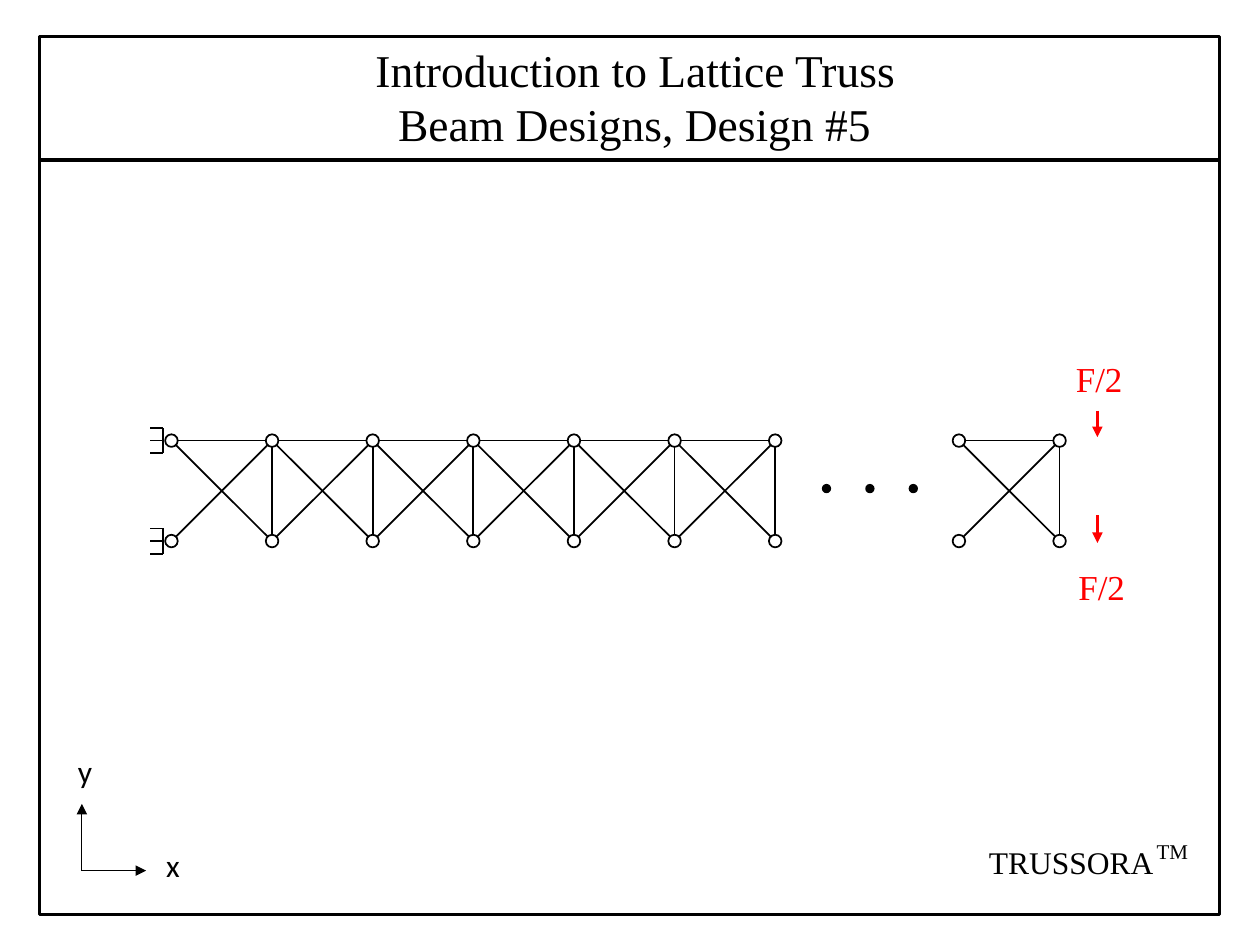
from lxml import etree
from pptx import Presentation
from pptx.dml.color import RGBColor
from pptx.enum import shapes, text
from pptx.oxml.ns import qn
from pptx.util import Pt

COLORS = {"ink": "000000", "paper": "FFFFFF", "force": "FF0000"}
SERIF, SANS = "Times New Roman", "Calibri"


class Sketch:
    frame_format = {
        "word_wrap": True,
        "auto_size": text.MSO_AUTO_SIZE.NONE,
        "vertical_anchor": text.MSO_ANCHOR.TOP,
        "margin_left": Pt(7.2),
        "margin_right": Pt(7.2),
        "margin_top": Pt(3.6),
        "margin_bottom": Pt(3.6),
    }

    def __init__(self, page):
        self.page = page
        self.layer = page.shapes

    def start_group(self):
        self.layer = self.page.shapes.add_group_shape().shapes

    def end_group(self):
        self.layer = self.page.shapes

    def color(self, name):
        return RGBColor.from_string(COLORS[name])

    def line(self, start, end, width=1, color="ink", arrow=False):
        connector = self.layer.add_connector(
            shapes.MSO_CONNECTOR.STRAIGHT, *map(Pt, (*start, *end)))
        connector.line.width = Pt(width)
        connector.line.color.rgb = self.color(color)
        properties = connector._element.spPr
        if arrow:
            etree.SubElement(properties.find(qn("a:ln")), qn("a:tailEnd"), type="triangle")
        etree.SubElement(properties, qn("a:effectLst"))

    def shape(self, kind, left, top, width, height, fill=None, weight=1):
        shape = self.layer.add_shape(kind, *map(Pt, (left, top, width, height)))
        shape.shadow.inherit = False
        if fill:
            shape.fill.solid()
            shape.fill.fore_color.rgb = self.color(fill)
        else:
            shape.fill.background()
        shape.line.width = Pt(weight)
        shape.line.color.rgb = self.color("ink")

    def dot(self, x, y, size, fill):
        self.shape(shapes.MSO_SHAPE.OVAL, x - size / 2, y - size / 2, size, size, fill)

    def label(self, area, paragraphs, color="ink", indents=(0,)):
        box = self.layer.add_textbox(*map(Pt, area))
        frame = box.text_frame
        for name, value in self.frame_format.items():
            setattr(frame, name, value)
        for index, spans in enumerate(paragraphs):
            para = frame.add_paragraph() if index else frame.paragraphs[0]
            para.alignment = text.PP_ALIGN.LEFT
            if indents[index]:
                para._p.get_or_add_pPr().set("marL", str(Pt(indents[index])))
            for words, size, font in spans:
                span = para.add_run()
                span.text = words
                for name, value in {"size": Pt(size), "name": font}.items():
                    setattr(span.font, name, value)
                span.font.color.rgb = self.color(color)


def draw_truss(sketch):
    pitch, first, last = 57.5, 98, 548
    top, bottom = 251.8, 309.2
    panels = [first + pitch * index for index in range(6)] + [last]
    sketch.start_group()
    for left in panels:
        right = left + pitch
        for start, end in (
            ((right, bottom), (right, top)),
            ((left, top), (right, top)),
            ((left, top), (right, bottom)),
            ((left, bottom), (right, top)),
        ):
            sketch.line(start, end)
    for y in (top, bottom):
        wall = first - 4.8
        sketch.line((wall, y - 7.2), (wall, y + 7.2))
        for offset in (-7.2, 0, 7.2):
            sketch.line((wall - 7.2, y + offset), (wall, y + offset))
        for x in sorted({x for left in panels for x in (left, left + pitch)}):
            sketch.dot(x, y, 7.2, "paper")
    for index in range(3):
        sketch.dot(472.3 + 24.8 * index, 279.2, 4.3, "ink")
    sketch.end_group()


def draw_axes(sketch):
    origin = (46.8, 497.5)
    sketch.start_group()
    for tip, name, corner in (
        ((83.5, 497.5), "x", (87.8, 480.2)),
        ((46.8, 459.4), "y", (37.4, 426.2)),
    ):
        sketch.line(origin, tip, width=0.5, arrow=True)
        sketch.label((*corner, 22.3, 28.8), [[(name, 18, SANS)]])
    sketch.end_group()


def draw_forces(sketch):
    for corner, start, end in (
        ((607.7, 200.9), 234.7, 249.8),
        ((609.1, 319.7), 294.5, 310.3),
    ):
        sketch.label((*corner, 50.4, 31.7), [[("F/2", 20, SERIF)]], color="force")
        sketch.line((627.1, start), (627.1, end), width=2, color="force", arrow=True)


def draw_mark(sketch):
    sketch.start_group()
    sketch.label((558, 478.1, 109.4, 28.8), [[("TRUSSORA", 18, SERIF)]])
    sketch.label((653.8, 469.4, 36.7, 28.8), [[("TM", 12, SERIF), (" ", 18, SANS)]])
    sketch.end_group()


def main():
    deck = Presentation()
    deck.slide_width, deck.slide_height = Pt(720), Pt(540)
    sketch = Sketch(deck.slides.add_slide(deck.slide_layouts[6]))
    draw_truss(sketch)
    sketch.shape(shapes.MSO_SHAPE.RECTANGLE, 22.5, 20.8, 674.5, 501.7, weight=2)
    sketch.line((22.5, 91.4), (697, 91.4), width=2)
    draw_forces(sketch)
    draw_axes(sketch)
    sketch.label(
        (207.4, 20.2, 324.7, 70.6),
        [[("Introduction to Lattice Truss", 26, SERIF)],
         [("Beam Designs, Design #5", 26, SERIF)]],
        indents=(0, 13),
    )
    draw_mark(sketch)
    deck.save("out.pptx")


if __name__ == "__main__":
    main()
